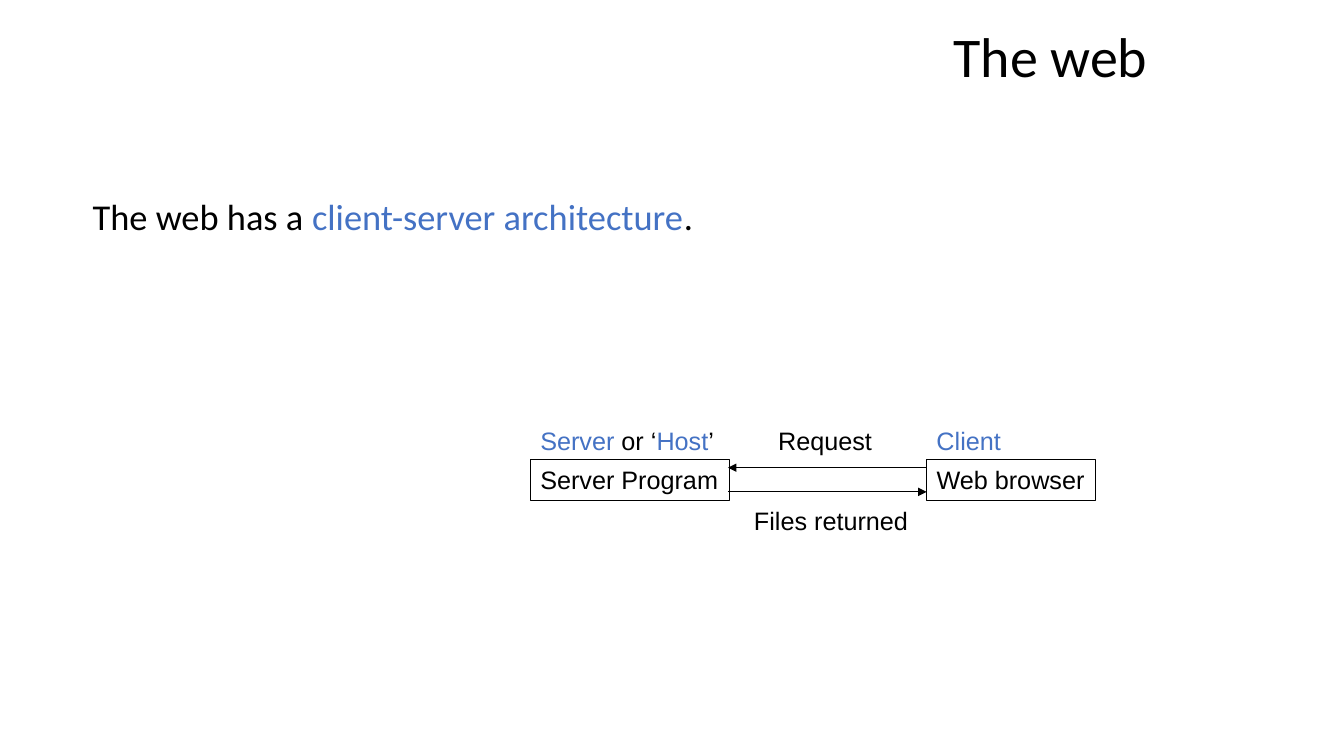
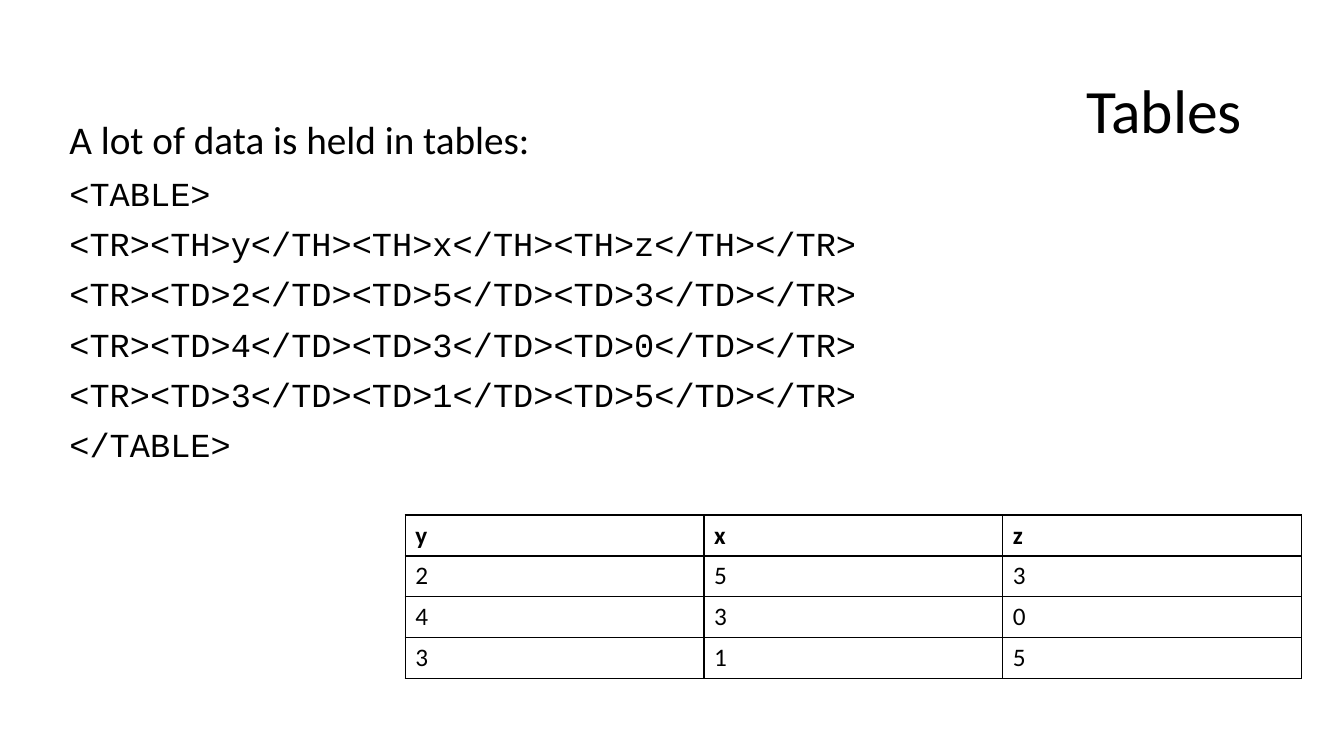
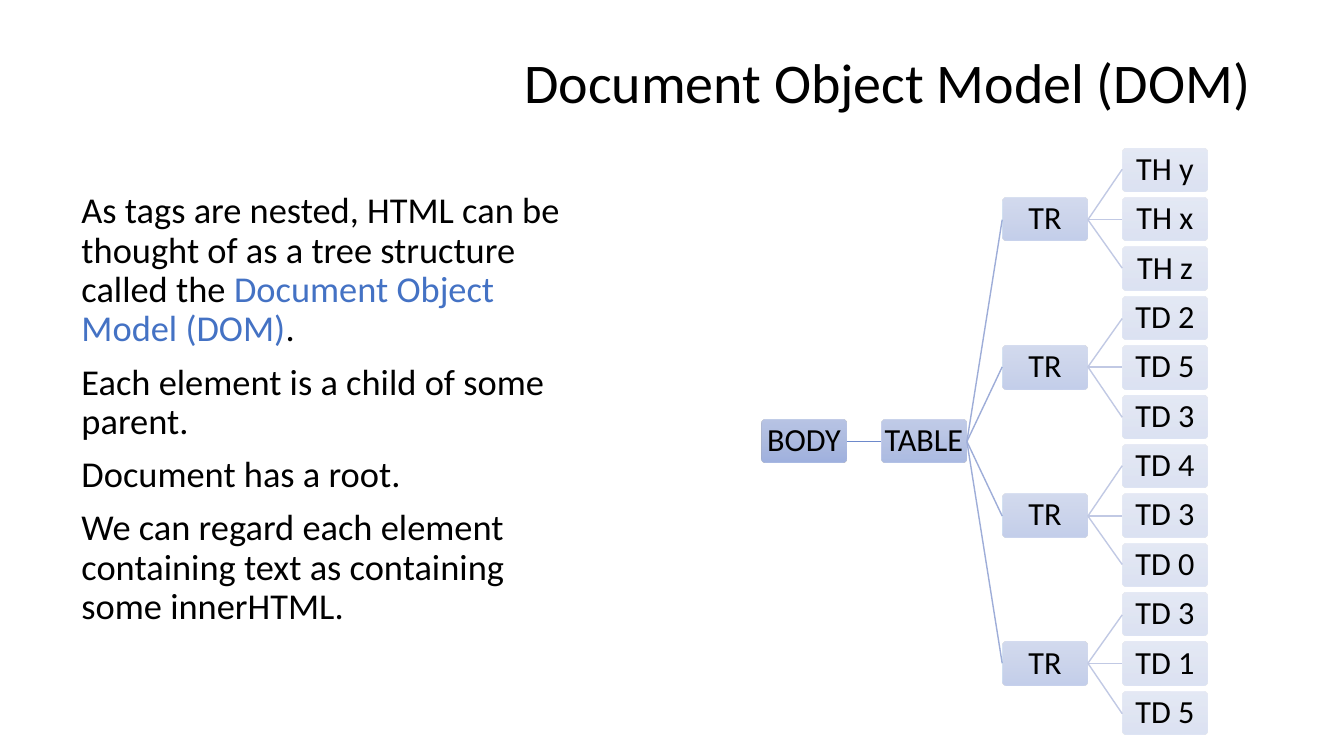
from dataclasses import dataclass
from typing import NamedTuple, Optional, Sequence

from lxml import etree
from pptx import Presentation
from pptx.dml.color import RGBColor
from pptx.enum import shapes, text
from pptx.oxml import ns
from pptx.util import Pt

EMU_PER_PX = 9144  # 100 px to the inch


@dataclass(frozen=True)
class Theme:
    ink: str = "000000"
    accent: str = "4472C4"
    node_gradient: tuple = ((0, "A8B7DF"), (50, "9AABD9"), (100, "889ED7"))
    node_opacity: tuple = (80, 70, 50, 30)
    branch_colors: tuple = ("6D89CB", "9EADD8", "C1C9E4")
    sans: str = "Calibri"
    label: str = "Arial"
    mono: str = "Courier New"
    title_size: int = 40
    large_title_size: int = 44
    body_size: int = 26
    large_body_size: int = 28
    code_size: int = 24
    node_size: int = 23
    label_size: int = 18
    line_spacing: float = 0.9
    space_before: int = 10
    thin: float = 0.75
    line: float = 1


THEME = Theme()


class Box(NamedTuple):
    left: int
    top: int
    width: int
    height: int


@dataclass(frozen=True)
class Span:
    text: str
    accent: bool = False
    bold: bool = False
    font: Optional[str] = None
    size: Optional[int] = None


@dataclass(frozen=True)
class Label:
    box: Box
    spans: Sequence[Span]
    framed: bool = False


@dataclass(frozen=True)
class Arrow:
    start: int
    end: int
    y: int


Paragraph = Sequence[Span]

HEADINGS = ("y", "x", "z")
RECORDS = (("2", "5", "3"), ("4", "3", "0"), ("3", "1", "5"))
TAGGED_ROWS = [("TH", HEADINGS)] + [("TD", record) for record in RECORDS]


def px(*lengths: int) -> list[int]:
    return [length * EMU_PER_PX for length in lengths]


def rgb(color: str) -> RGBColor:
    return RGBColor.from_string(color)


def add_xml(parent, tag: str, **attributes):
    return etree.SubElement(parent, ns.qn(tag), attributes)


def write_text(frame, paragraphs: Sequence[Paragraph], *, size: int,
               font: str = THEME.sans, align=text.PP_ALIGN.LEFT,
               anchor=text.MSO_ANCHOR.TOP, wrap: bool = True,
               line_spacing: float = 1.0, space_before: int = 0,
               inset: Optional[int] = None) -> None:
    frame.word_wrap = wrap
    frame.auto_size = text.MSO_AUTO_SIZE.NONE
    frame.vertical_anchor = anchor
    if inset is not None:
        frame.margin_left = frame.margin_right = inset * EMU_PER_PX
        frame.margin_top = frame.margin_bottom = inset * EMU_PER_PX
    for index, spans in enumerate(paragraphs):
        para = frame.add_paragraph() if index else frame.paragraphs[0]
        para.alignment = align
        para.line_spacing = line_spacing
        para.space_before = Pt(space_before)
        for span in spans:
            write_span(para, span, font, size)


def write_span(para, span: Span, font: str, size: int) -> None:
    run = para.add_run()
    run.text = span.text
    run.font.name = span.font or font
    run.font.size = Pt(span.size or size)
    run.font.bold = span.bold
    run.font.color.rgb = rgb(THEME.accent if span.accent else THEME.ink)


def add_titled_page(deck, title: str, box: Box, size: int = THEME.title_size):
    page = deck.slides.add_slide(deck.slide_layouts[5])
    holder = page.shapes.title
    holder.left, holder.top, holder.width, holder.height = px(*box)
    write_text(holder.text_frame, [[Span(title)]], size=size,
               align=text.PP_ALIGN.RIGHT, anchor=text.MSO_ANCHOR.MIDDLE,
               line_spacing=THEME.line_spacing)
    return page


def add_body(page, box: Box, paragraphs: Sequence[Paragraph],
             size: int = THEME.body_size) -> None:
    body = page.shapes.add_textbox(*px(*box))
    write_text(body.text_frame, paragraphs, size=size,
               line_spacing=THEME.line_spacing,
               space_before=THEME.space_before)


def add_label(page, label: Label) -> None:
    shape = page.shapes.add_textbox(*px(*label.box))
    if label.framed:
        shape.line.color.rgb = rgb(THEME.ink)
        shape.line.width = Pt(THEME.thin)
    write_text(shape.text_frame, [label.spans], size=THEME.label_size,
               font=THEME.label, wrap=False)


def add_line(page, start: tuple[int, int], end: tuple[int, int], *,
             color: str, width: float, arrow: bool = False) -> None:
    line = page.shapes.add_connector(
        shapes.MSO_CONNECTOR.STRAIGHT, *px(*start, *end))
    line.line.color.rgb = rgb(color)
    line.line.width = Pt(width)
    if arrow:
        add_xml(line.line._get_or_add_ln(), "a:tailEnd", type="triangle")
    add_xml(line._element.spPr, "a:effectLst")


def add_bordered_table(page, box: Box, rows: Sequence[Sequence[str]]) -> None:
    """Draw a plain grid whose first row is bold."""
    table = page.shapes.add_table(len(rows), len(rows[0]), *px(*box)).table
    table.first_row = table.horz_banding = False
    for row_index, values in enumerate(rows):
        for column_index, value in enumerate(values):
            cell = table.cell(row_index, column_index)
            add_borders(cell)
            cell.fill.background()
            write_text(cell.text_frame, [[Span(value, bold=row_index == 0)]],
                       size=THEME.label_size)


def add_borders(cell) -> None:
    properties = cell._tc.get_or_add_tcPr()
    for side in ("a:lnL", "a:lnR", "a:lnT", "a:lnB"):
        border = add_xml(properties, side, w=str(Pt(THEME.line)))
        add_xml(add_xml(border, "a:solidFill"), "a:srgbClr", val=THEME.ink)


class DomTree:
    """A left-to-right tree on a grid of levels and leaf rows."""
    left, top = 755, 147
    level_pitch, row_pitch = 119.4, 49
    node_width, node_height = 85, 43

    def __init__(self, page):
        self.page = page

    def node_left(self, level: int) -> int:
        return round(self.left + level * self.level_pitch)

    def center_y(self, row: float) -> int:
        return round(self.top + row * self.row_pitch + self.node_height / 2)

    def add_branch(self, level: int, row: float, child_row: float) -> None:
        add_line(self.page,
                 (self.node_left(level) + self.node_width, self.center_y(row)),
                 (self.node_left(level + 1), self.center_y(child_row)),
                 color=THEME.branch_colors[level], width=THEME.line)

    def add_node(self, name: str, level: int, row: float) -> None:
        box = Box(self.node_left(level), round(self.top + row * self.row_pitch),
                  self.node_width, self.node_height)
        node = self.page.shapes.add_shape(
            shapes.MSO_SHAPE.ROUNDED_RECTANGLE, *px(*box))
        node.adjustments[0] = 0.1
        node.shadow.inherit = False
        node.line.fill.background()
        fill_translucent(node, THEME.node_opacity[level])
        write_text(node.text_frame, [[Span(name)]], size=THEME.node_size,
                   align=text.PP_ALIGN.CENTER, anchor=text.MSO_ANCHOR.MIDDLE,
                   wrap=False, line_spacing=THEME.line_spacing, inset=2)


def fill_translucent(shape, opacity: int) -> None:
    """Fill with the vertical node gradient at an opacity in percent."""
    shape.fill.gradient()
    shape.fill.gradient_angle = 270
    stops = shape._element.spPr.find(".//" + ns.qn("a:gsLst"))
    for stop in list(stops):
        stops.remove(stop)
    for position, color in THEME.node_gradient:
        stop = add_xml(stops, "a:gs", pos=str(position * 1000))
        add_xml(add_xml(stop, "a:srgbClr", val=color), "a:alpha",
                val=str(opacity * 1000))


def build_web_page(deck) -> None:
    page = add_titled_page(deck, "The web", Box(310, 13, 838, 92))
    add_body(page, Box(82, 193, 953, 425), [
        [Span("The web has a "),
         Span("client-server architecture", accent=True), Span(".")]])
    server_left, client_left, heading_top, program_top = 526, 919, 417, 456
    labels = (
        Label(Box(server_left, program_top, 198, 41),
              [Span("Server Program")], framed=True),
        Label(Box(client_left, program_top, 168, 41),
              [Span("Web browser")], framed=True),
        Label(Box(server_left, heading_top, 192, 40),
              [Span("Server", accent=True), Span(" or ‘"),
               Span("Host", accent=True), Span("’")]),
        Label(Box(client_left, heading_top, 84, 40),
              [Span("Client", accent=True)]),
        Label(Box(762, heading_top, 113, 40), [Span("Request")]),
        Label(Box(738, 496, 173, 40), [Span("Files returned")]),
    )
    for label in labels:
        add_label(page, label)
    server_edge = 722
    for arrow in (Arrow(client_left, server_edge, 464),
                  Arrow(server_edge, client_left, 488)):
        add_line(page, (arrow.start, arrow.y), (arrow.end, arrow.y),
                 color=THEME.ink, width=THEME.thin, arrow=True)


def html_row(tag: str, values: Sequence[str]) -> str:
    cells = "".join(f"<{tag}>{value}</{tag}>" for value in values)
    return f"<TR>{cells}</TR>"


def build_tables_page(deck) -> None:
    page = add_titled_page(deck, "Tables", Box(92, 40, 1150, 145),
                           THEME.large_title_size)
    rows = [html_row(tag, values) for tag, values in TAGGED_ROWS]
    code = [[Span(line, font=THEME.mono, size=THEME.code_size)]
            for line in ("<TABLE>", *rows, "</TABLE>")]
    add_body(page, Box(59, 115, 1233, 611),
             [[Span("A lot of data is held in tables:")], *code],
             THEME.large_body_size)
    add_bordered_table(page, Box(402, 511, 889, 162), (HEADINGS, *RECORDS))


def build_dom_page(deck) -> None:
    page = add_titled_page(deck, "Document Object Model (DOM)",
                           Box(373, 22, 877, 125))
    add_body(page, Box(71, 186, 503, 495), [
        [Span("As tags are nested, HTML can be thought of as a tree structure "
              "called the "),
         Span("Document Object Model (DOM)", accent=True), Span(".")],
        [Span("Each element is a child of some parent.")],
        [Span("Document has a root.")],
        [Span("We can regard each element containing text as containing some "
              "innerHTML.")]])
    tree = DomTree(page)
    group = len(HEADINGS)
    root_row = (len(TAGGED_ROWS) * group - 1) / 2
    tree.add_node("BODY", 0, root_row)
    tree.add_branch(0, root_row, root_row)
    tree.add_node("TABLE", 1, root_row)
    for index, (tag, values) in enumerate(TAGGED_ROWS):
        first_leaf = index * group
        parent_row = first_leaf + (group - 1) / 2
        tree.add_branch(1, root_row, parent_row)
        tree.add_node("TR", 2, parent_row)
        for leaf_row, value in enumerate(values, first_leaf):
            tree.add_branch(2, parent_row, leaf_row)
            tree.add_node(f"{tag} {value}", 3, leaf_row)


def main() -> None:
    deck = Presentation()
    deck.slide_width, deck.slide_height = px(1333, 750)
    build_web_page(deck)
    build_tables_page(deck)
    build_dom_page(deck)
    deck.save("out.pptx")


if __name__ == "__main__":
    main()
